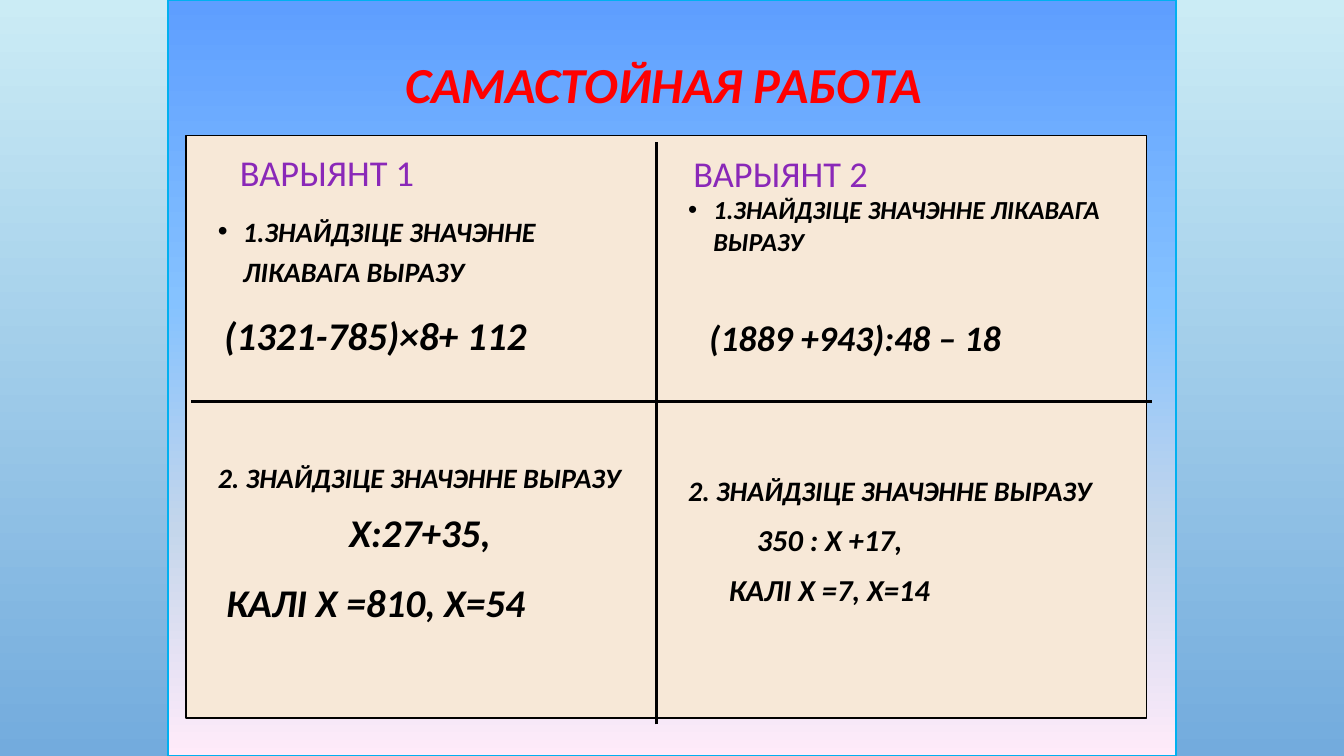
from dataclasses import dataclass

from lxml.etree import SubElement
from pptx import Presentation
from pptx.dml.color import RGBColor
from pptx.enum.shapes import MSO_CONNECTOR, MSO_SHAPE
from pptx.enum.text import MSO_ANCHOR, MSO_AUTO_SIZE, PP_ALIGN
from pptx.oxml.ns import qn
from pptx.util import Emu, Pt

EMU_PER_PX = 9525
BLACK, RED, PURPLE, CREAM, CYAN = "000000", "FF0000", "8A28B8", "F7E8D7", "00B0F0"
BACKGROUND_STOPS = [(0, "CBECF5"), (100, "73ABDD")]
PANEL_STOPS = [(0, "5E9EFF"), (40, "85C2FF"), (70, "C4D6EB"), (100, "FFEBFA")]
BULLET_INDENT = 18


@dataclass(frozen=True)
class Box:
    left: int
    top: int
    width: int
    height: int


@dataclass(frozen=True)
class Line:
    """One paragraph; size, space before and indent are in points."""
    text: str
    size: float
    before: float = 0
    indent: float = 0
    bullet: bool = False


@dataclass(frozen=True)
class Variant:
    heading: Line
    heading_box: Box
    task_box: Box
    spacing: float
    tasks: tuple[Line, ...]


@dataclass(frozen=True)
class Divider:
    start: tuple[int, int]
    end: tuple[int, int]


PANEL = Box(160, 0, 960, 720)
CARD = Box(177, 129, 915, 555)
TITLE = Box(88, -1, 1088, 168)
DIVIDERS = [
    Divider((182, 382), (1097, 382)),
    Divider((625, 690), (625, 135)),
]
VARIANTS = [
    Variant(
        Line("ВАРЫЯНТ 1", 26, indent=6),
        Box(211, 118, 512, 71),
        Box(198, 193, 424, 415),
        1.2,
        (
            Line("1.ЗНАЙДЗІЦЕ ЗНАЧЭННЕ ЛІКАВАГА ВЫРАЗУ", 20, bullet=True),
            Line("(1321-785)×8+ 112", 28, before=10, indent=4.5),
            Line("2. ЗНАЙДЗІЦЕ ЗНАЧЭННЕ ВЫРАЗУ", 20, before=68),
            Line("Х:27+35,", 28, before=3, indent=94),
            Line("КАЛІ Х =810, Х=54", 28, before=10, indent=6),
        ),
    ),
    Variant(
        Line("ВАРЫЯНТ 2", 26),
        Box(651, 119, 513, 71),
        Box(646, 180, 424, 415),
        1.0,
        (
            Line("1.ЗНАЙДЗІЦЕ ЗНАЧЭННЕ ЛІКАВАГА ВЫРАЗУ", 18.6, bullet=True),
            Line("(1889 +943):48 – 18", 25.6, before=42, indent=15),
            Line("2. ЗНАЙДЗІЦЕ ЗНАЧЭННЕ ВЫРАЗУ", 20.1, before=82),
            Line("350 : Х +17,", 21.7, before=10, indent=49),
            Line("КАЛІ Х =7, Х=14", 21.7, before=10, indent=29),
        ),
    ),
]


def px(length: int) -> Emu:
    return Emu(length * EMU_PER_PX)


def color(value: str) -> RGBColor:
    return RGBColor.from_string(value)


def place(box: Box) -> tuple[Emu, Emu, Emu, Emu]:
    return px(box.left), px(box.top), px(box.width), px(box.height)


def set_attributes(target, values: dict) -> None:
    for name, value in values.items():
        setattr(target, name, value)


def fill_gradient(fill, owner, stops: list[tuple[int, str]]) -> None:
    """Give the fill, first gradient inside owner, stops from top to bottom."""
    fill.gradient()
    fill.gradient_angle = 270
    stop_list = next(owner.iter(qn("a:gsLst")))
    for old_stop in list(stop_list):
        stop_list.remove(old_stop)
    for percent, value in stops:
        stop = SubElement(stop_list, qn("a:gs"), pos=str(percent * 1000))
        SubElement(stop, qn("a:srgbClr"), val=value)


def add_rectangle(slide, box: Box, outline: str):
    shape = slide.shapes.add_shape(MSO_SHAPE.RECTANGLE, *place(box))
    shape.shadow.inherit = False
    shape.line.color.rgb = color(outline)
    shape.line.width = Pt(1.25)
    return shape


def add_divider(slide, divider: Divider) -> None:
    ends = [px(value) for value in divider.start + divider.end]
    connector = slide.shapes.add_connector(MSO_CONNECTOR.STRAIGHT, *ends)
    connector.line.color.rgb = color(BLACK)
    connector.line.width = Pt(2.25)
    SubElement(connector.element.spPr, qn("a:effectLst"))


def write_lines(frame, lines: tuple[Line, ...], spacing: float, anchor: MSO_ANCHOR,
                align: PP_ALIGN, ink: str, emphasis: bool) -> None:
    set_attributes(frame, {"word_wrap": True, "auto_size": MSO_AUTO_SIZE.NONE,
                           "vertical_anchor": anchor})
    for index, line in enumerate(lines):
        paragraph = frame.add_paragraph() if index else frame.paragraphs[0]
        properties = paragraph._p.get_or_add_pPr()
        if line.bullet:
            properties.set("marL", str(Pt(BULLET_INDENT)))
            properties.set("indent", str(-Pt(BULLET_INDENT)))
            SubElement(properties, qn("a:buFont"), typeface="Arial")
            SubElement(properties, qn("a:buChar"), char="•")
        elif line.indent:
            properties.set("marL", str(Pt(line.indent)))
        set_attributes(paragraph, {"alignment": align, "line_spacing": spacing,
                                   "space_before": Pt(line.before)})
        run = paragraph.add_run()
        run.text = line.text
        set_attributes(run.font, {"name": "Calibri", "size": Pt(line.size),
                                  "bold": emphasis, "italic": emphasis})
        run.font.color.rgb = color(ink)


def add_variant(slide, variant: Variant) -> None:
    heading = slide.shapes.add_textbox(*place(variant.heading_box))
    write_lines(heading.text_frame, (variant.heading,), 0.85, MSO_ANCHOR.BOTTOM,
                PP_ALIGN.LEFT, PURPLE, False)
    tasks = slide.shapes.add_textbox(*place(variant.task_box))
    write_lines(tasks.text_frame, variant.tasks, variant.spacing, MSO_ANCHOR.TOP,
                PP_ALIGN.LEFT, BLACK, True)


def main() -> None:
    presentation = Presentation()
    set_attributes(presentation, {"slide_width": px(1280), "slide_height": px(720)})
    slide = presentation.slides.add_slide(presentation.slide_layouts[5])
    fill_gradient(slide.background.fill, slide.element, BACKGROUND_STOPS)

    panel = add_rectangle(slide, PANEL, CYAN)
    fill_gradient(panel.fill, panel.element, PANEL_STOPS)
    card = add_rectangle(slide, CARD, BLACK)
    card.fill.solid()
    card.fill.fore_color.rgb = color(CREAM)

    title = slide.shapes.title
    set_attributes(title, dict(zip(("left", "top", "width", "height"), place(TITLE))))
    write_lines(title.text_frame, (Line("САМАСТОЙНАЯ РАБОТА", 36),), 0.9,
                MSO_ANCHOR.MIDDLE, PP_ALIGN.CENTER, RED, True)
    card.element.addnext(title.element)

    for variant in VARIANTS:
        add_variant(slide, variant)
    for divider in DIVIDERS:
        add_divider(slide, divider)
    presentation.save("out.pptx")


if __name__ == "__main__":
    main()
